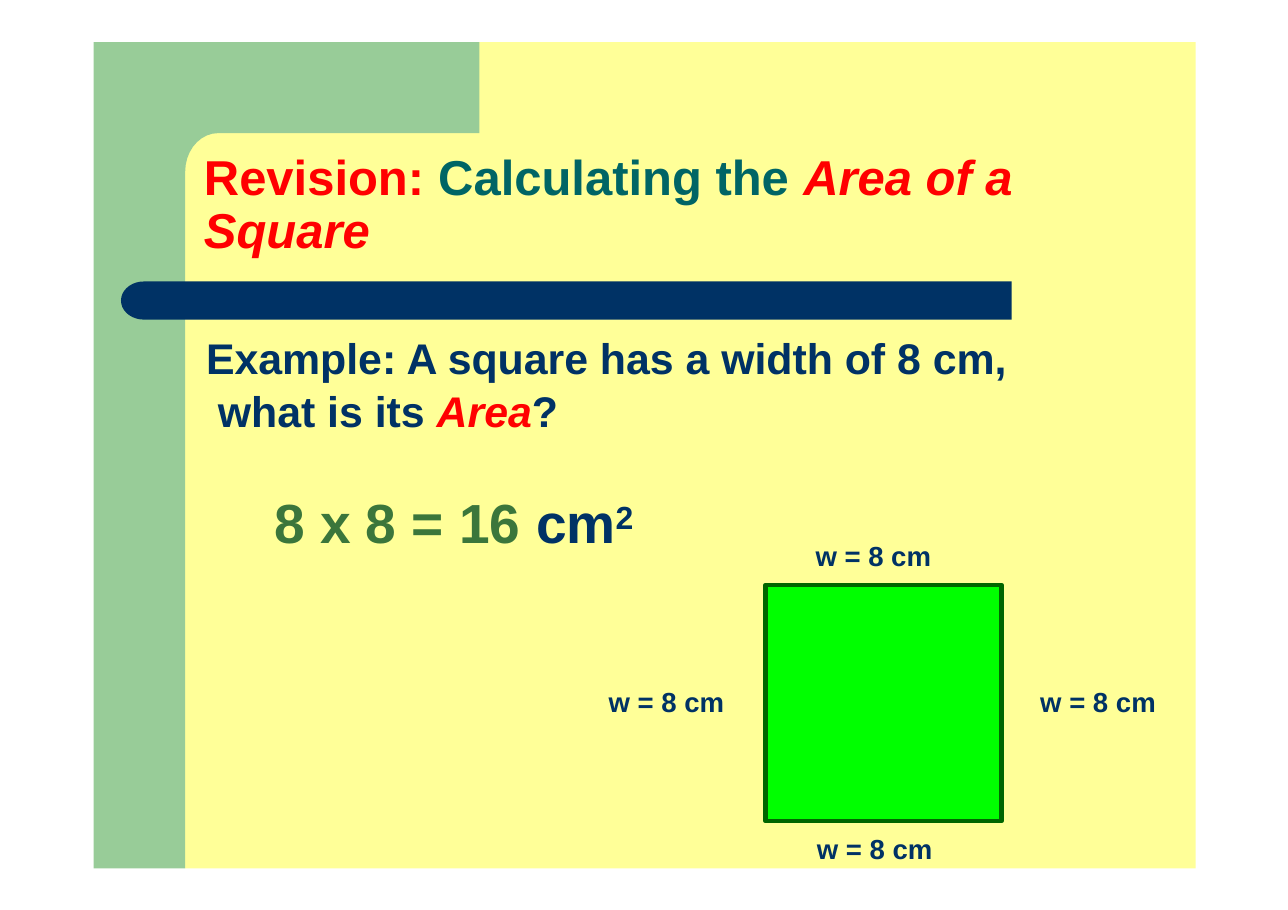
from math import cos, sin, radians
from pptx import Presentation
from pptx.dml.color import RGBColor as RGB
from pptx.enum.shapes import MSO_SHAPE as SHAPE
from pptx.enum.text import MSO_ANCHOR as ANCHOR, MSO_AUTO_SIZE as FIT, PP_ALIGN as ALIGN
from pptx.util import Cm, Pt

HUES = {
    "cream": "FFFF98", "sage": "98CC98", "navy": "003265", "red": "FF0000",
    "teal": "006565", "lime": "00FF00", "edge": "006500", "moss": "3B763B",
}


def hue(name):
    """Return the named colour."""
    return RGB.from_string(HUES[name])


def paint(shape, fill, line=None, width=3):
    """Give a shape a flat fill and an optional outline."""
    shape.shadow.inherit = False
    shape.fill.solid()
    shape.fill.fore_color.rgb = hue(fill)
    if line:
        shape.line.color.rgb = hue(line)
        shape.line.width = Pt(width)
    else:
        shape.line.fill.background()


def add_box(slide, x, y, w, h, *style):
    """Add a painted rectangle."""
    box = slide.shapes.add_shape(SHAPE.RECTANGLE, Cm(x), Cm(y), Cm(w), Cm(h))
    paint(box, *style)


def arc(x, y, rx, ry, start, end):
    """List points along part of an ellipse, in centimetres."""
    step = 10 if end > start else -10
    turns = [radians(a) for a in range(start, end + step, step)]
    return [(x + rx * cos(t), y + ry * sin(t)) for t in turns]


def add_form(slide, points, fill):
    """Add a painted closed outline."""
    spots = [(Cm(x), Cm(y)) for x, y in points]
    form = slide.shapes.build_freeform(*spots[0])
    form.add_line_segments(spots[1:], close=True)
    paint(form.convert_to_shape(), fill)


def set_frame(shape, top):
    """Clear the side margins of a text shape and return its frame."""
    frame = shape.text_frame
    frame.word_wrap = True
    frame.auto_size = FIT.NONE
    frame.vertical_anchor = ANCHOR.TOP
    frame.margin_left = frame.margin_right = frame.margin_bottom = 0
    frame.margin_top = Cm(top)
    return frame


def add_text(slide, x, y, w, h):
    """Add a text box and return its frame."""
    box = slide.shapes.add_textbox(Cm(x), Cm(y), Cm(w), Cm(h))
    return set_frame(box, 0.03)


def write(para, size, runs, before=0, lines=1.0, indent=0):
    """Fill a bold paragraph from (text, colour, italic) runs."""
    para.alignment = ALIGN.LEFT
    para.space_before = Pt(before)
    para.line_spacing = lines
    para.font.name = "Arial"
    para.font.size = Pt(size)
    para.font.bold = True
    if indent:
        props = para._p.get_or_add_pPr()
        props.set("marL", str(Cm(indent)))
        props.set("indent", "0")
    for text, tint, slant in runs:
        if text.startswith("\n"):
            para.add_line_break()
        run = para.add_run()
        run.text = text.strip("\n")
        run.font.color.rgb = hue(tint)
        run.font.italic = slant


def add_back(slide):
    """Draw the page, the side band and the title bar."""
    add_box(slide, 4.27, 0.97, 23.29, 19.05, "cream")
    curve = arc(5.03, 3.96, 0.76, 0.89, 180, 270)
    band = [(11.05, 0.97), (2.16, 0.97), (2.16, 20.02), (4.27, 20.02)]
    add_form(slide, band + curve + [(11.05, 3.07)], "sage")
    cap = arc(3.32, 6.93, 0.53, 0.44, 270, 90)
    add_form(slide, [(23.32, 6.49)] + cap + [(23.32, 7.37)], "navy")


def add_title(slide):
    """Place and write the title above the back shapes."""
    title = slide.shapes.title
    slide.shapes.element.append(title.element)
    title.left, title.top = Cm(4.67), Cm(3.02)
    title.width, title.height = Cm(20.37), Cm(2.97)
    para = set_frame(title, 0.51).paragraphs[0]
    runs = [("Revision: ", "red", False), ("Calculating the ", "teal", False),
            ("Area of a Square", "red", True)]
    write(para, 32, runs, before=5.5, lines=Pt(34.4), indent=0.03)


def add_square(slide):
    """Draw the square and name its four sides."""
    add_box(slide, 17.65, 13.49, 5.44, 5.44, "lime", "edge")
    for x, y in [(18.77, 12.4), (18.8, 19.15), (23.95, 15.77), (14, 15.77)]:
        frame = add_text(slide, x, y, 2.8, 0.84)
        write(frame.paragraphs[0], 18, [("w = 8 cm", "navy", False)],
              before=1, indent=0.03)


def add_task(slide):
    """Write the question and its working."""
    frame = add_text(slide, 4.67, 7.59, 18.69, 5)
    ask = [("Example: A square has a width of 8 cm,", "navy", False),
           ("\n what is its ", "navy", False), ("Area", "red", True),
           ("?", "navy", False)]
    write(frame.paragraphs[0], 28, ask, before=0.8, lines=1.03, indent=0.08)
    work = frame.add_paragraph()
    sums = [("8 x 8 = 16 ", "moss", False), ("cm", "navy", False),
            ("2", "navy", False)]
    write(work, 36, sums, before=34, indent=1.65)
    work.runs[-1]._r.get_or_add_rPr().set("baseline", "25000")


def main():
    """Build and save the slide."""
    deck = Presentation()
    deck.slide_width, deck.slide_height = Cm(29.69), Cm(20.98)
    slide = deck.slides.add_slide(deck.slide_layouts[5])
    add_back(slide)
    add_title(slide)
    add_square(slide)
    add_task(slide)
    deck.save("out.pptx")


if __name__ == "__main__":
    main()
